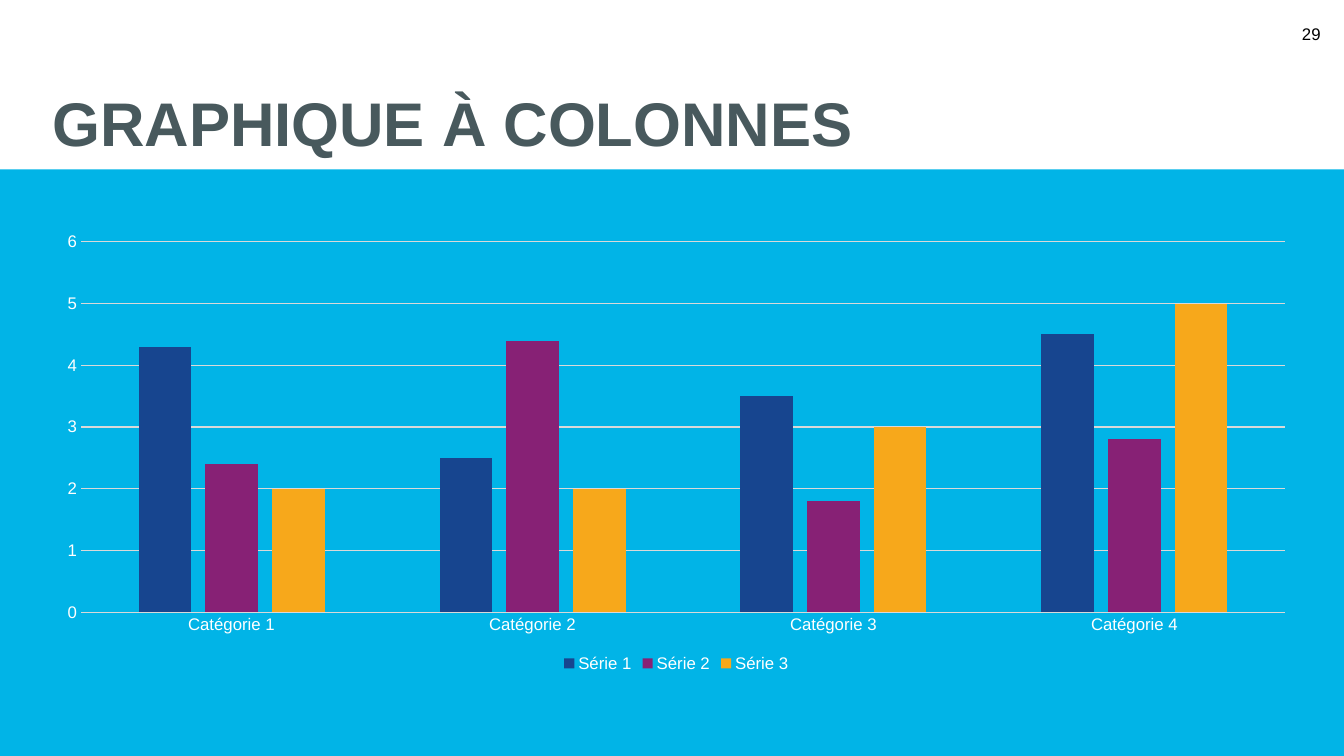
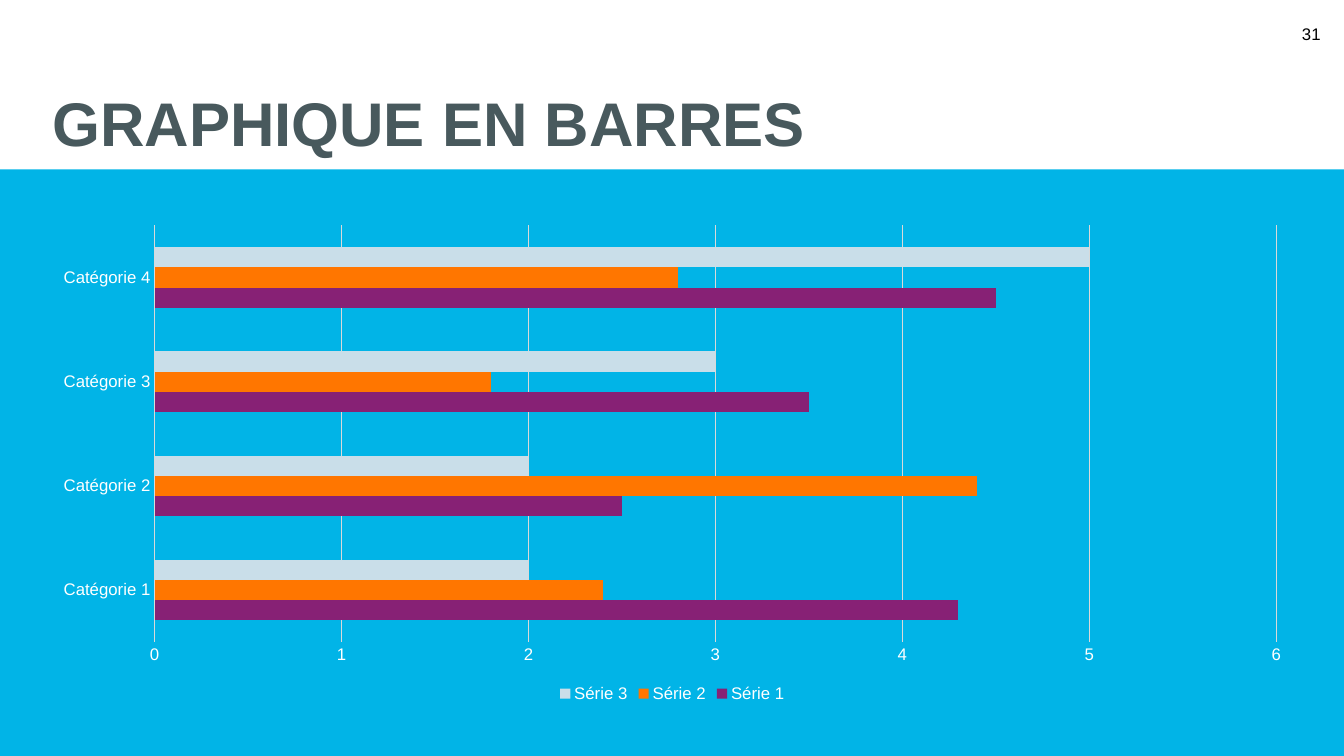
"""Build two slides with a column chart and a bar chart on a blue band."""
from pptx import Presentation
from pptx.chart.data import CategoryChartData
from pptx.dml.color import RGBColor
from pptx.enum import chart as ch, shapes, text
from pptx.util import Pt

FONT = "Arial"
WHITE, BLUE, SLATE, BLACK, GREY = "FFFFFF", "01B4E7", "48595D", "000000", "D9D9D9"
NAVY, PURPLE, AMBER, ORANGE, PALE = "17458F", "872175", "F7A81B", "FF7600", "C9DEE9"
W, H, BAND_TOP = 960, 540, 121

CATS = ["Catégorie 1", "Catégorie 2", "Catégorie 3", "Catégorie 4"]
SERIES = {
    "Série 1": (4.3, 2.5, 3.5, 4.5),
    "Série 2": (2.4, 4.4, 1.8, 2.8),
    "Série 3": (2, 2, 3, 5),
}
SLIDES = [
    ("GRAPHIQUE À COLONNES", "29", ch.XL_CHART_TYPE.COLUMN_CLUSTERED,
     (30.24, 159.84, 905.76, 323.28), -27, (NAVY, PURPLE, AMBER)),
    ("GRAPHIQUE EN BARRES", "31", ch.XL_CHART_TYPE.BAR_CLUSTERED,
     (27.36, 154.08, 905.76, 350.64), 0, (PURPLE, ORANGE, PALE)),
]
TITLE = dict(size=Pt(44), bold=True, name=FONT)
LABEL = dict(size=Pt(12), bold=False, name=FONT)


def style(font, fmt, color):
    for key, value in fmt.items():
        setattr(font, key, value)
    font.color.rgb = RGBColor.from_string(color)


def add_text(slide, box, words, fmt, color, frame, para):
    tf = slide.shapes.add_textbox(*map(Pt, box)).text_frame
    for key, value in frame.items():
        setattr(tf, key, value)
    p = tf.paragraphs[0]
    for key, value in para.items():
        setattr(p, key, value)
    r = p.add_run()
    r.text = words
    style(r.font, fmt, color)


prs = Presentation()
prs.slide_width, prs.slide_height = Pt(W), Pt(H)

for title, number, kind, box, overlap, colors in SLIDES:
    slide = prs.slides.add_slide(prs.slide_layouts[6])

    band = slide.shapes.add_shape(
        shapes.MSO_SHAPE.RECTANGLE, 0, Pt(BAND_TOP), Pt(W), Pt(H - BAND_TOP))
    band.shadow.inherit = False
    band.fill.solid()
    band.fill.fore_color.rgb = RGBColor.from_string(BLUE)
    band.line.fill.background()

    add_text(slide, (917.3, 9.4, 33.1, 28.8), number, LABEL, BLACK,
             dict(word_wrap=True, vertical_anchor=text.MSO_ANCHOR.MIDDLE),
             dict(alignment=text.PP_ALIGN.RIGHT))
    add_text(slide, (30.24, 0, 905.76, BAND_TOP), title, TITLE, SLATE,
             dict(word_wrap=True, vertical_anchor=text.MSO_ANCHOR.BOTTOM,
                  margin_top=0, margin_bottom=Pt(7.2)),
             dict(line_spacing=0.9))

    data = CategoryChartData()
    data.categories = CATS
    for name, values in SERIES.items():
        data.add_series(name, values)
    chart = slide.shapes.add_chart(kind, *map(Pt, box), data).chart
    style(chart.font, dict(size=Pt(10), name=FONT), WHITE)
    chart.has_title = False
    chart.has_legend = True
    chart.legend.position = ch.XL_LEGEND_POSITION.BOTTOM
    chart.legend.include_in_layout = False
    style(chart.legend.font, LABEL, WHITE)

    plot = chart.plots[0]
    plot.vary_by_categories = False
    plot.gap_width, plot.overlap = 219, overlap
    for series, color in zip(plot.series, colors):
        series.format.fill.solid()
        series.format.fill.fore_color.rgb = RGBColor.from_string(color)

    cat, val = chart.category_axis, chart.value_axis
    for axis in (cat, val):
        axis.major_tick_mark = axis.minor_tick_mark = ch.XL_TICK_MARK.NONE
        style(axis.tick_labels.font, LABEL, WHITE)
    val.minimum_scale, val.maximum_scale, val.major_unit = 0, 6, 1
    val.format.line.fill.background()
    for line in (cat.format.line, val.major_gridlines.format.line):
        line.width = Pt(0.75)
        line.color.rgb = RGBColor.from_string(GREY)

prs.save("out.pptx")
